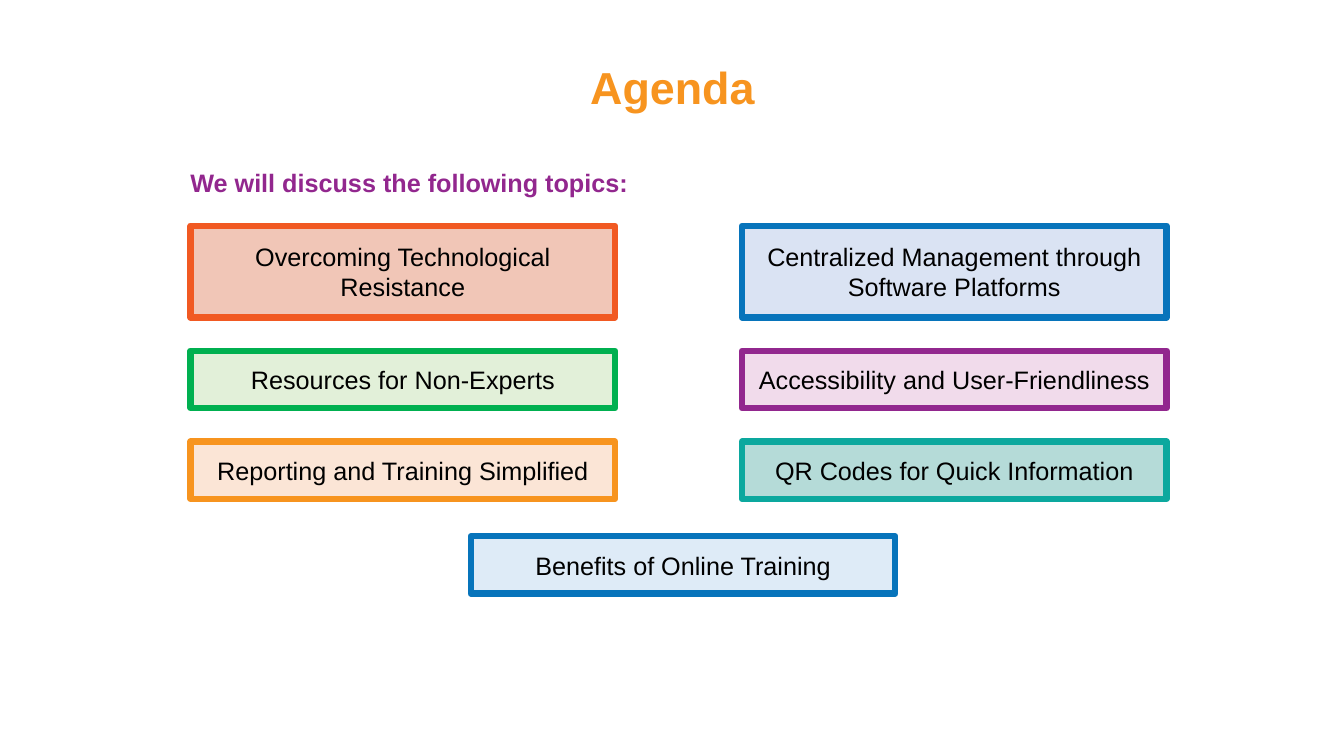
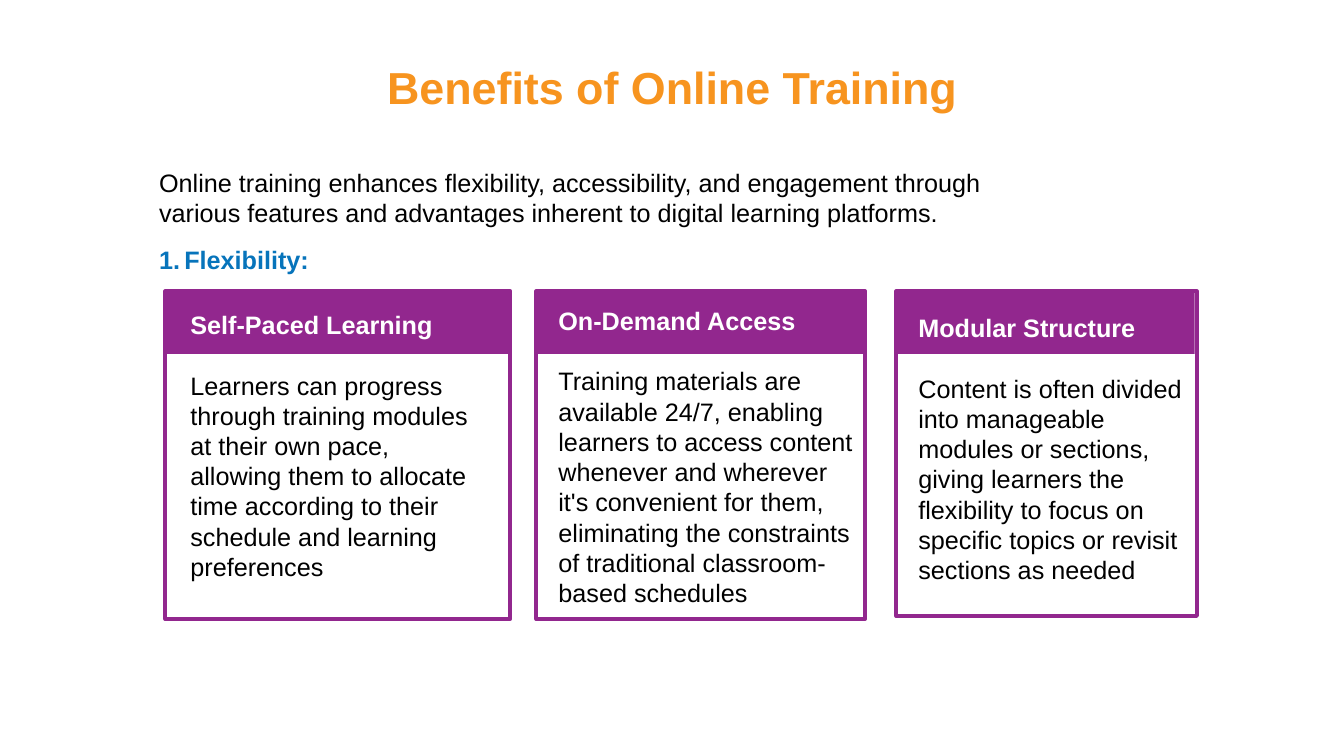
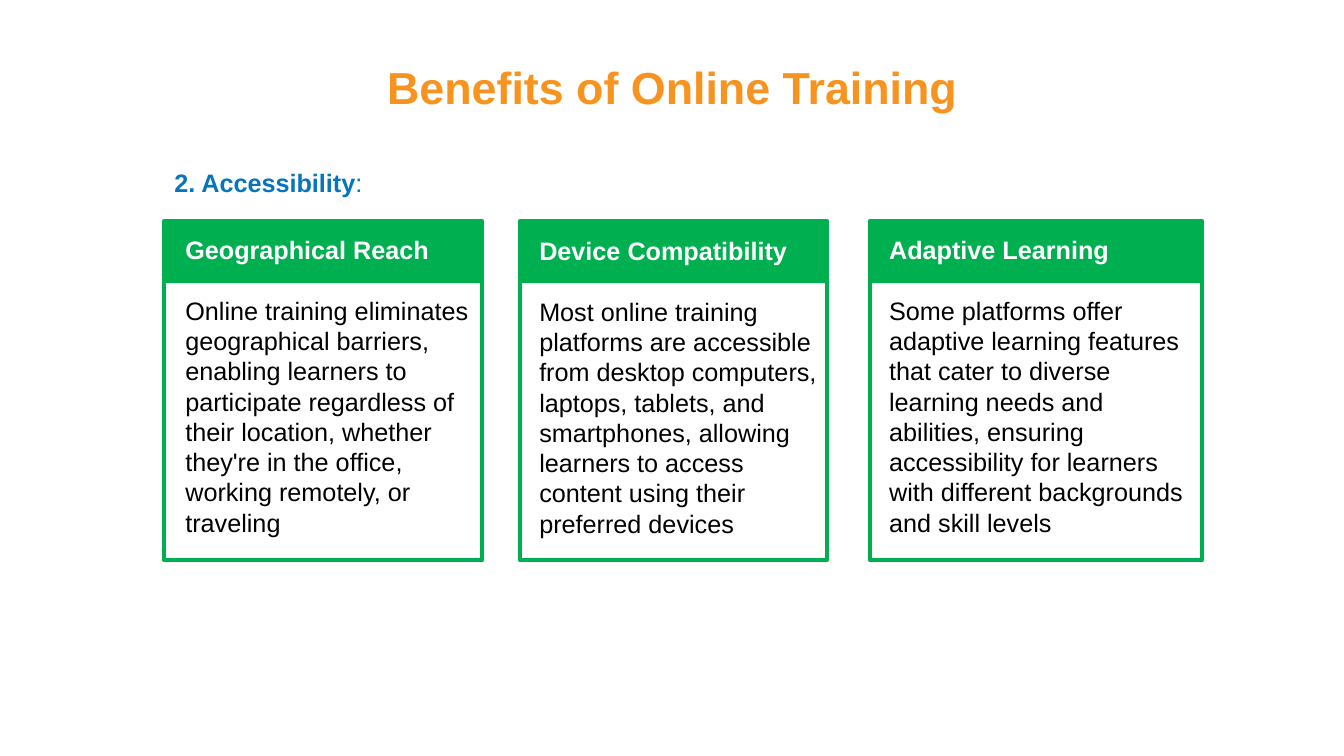
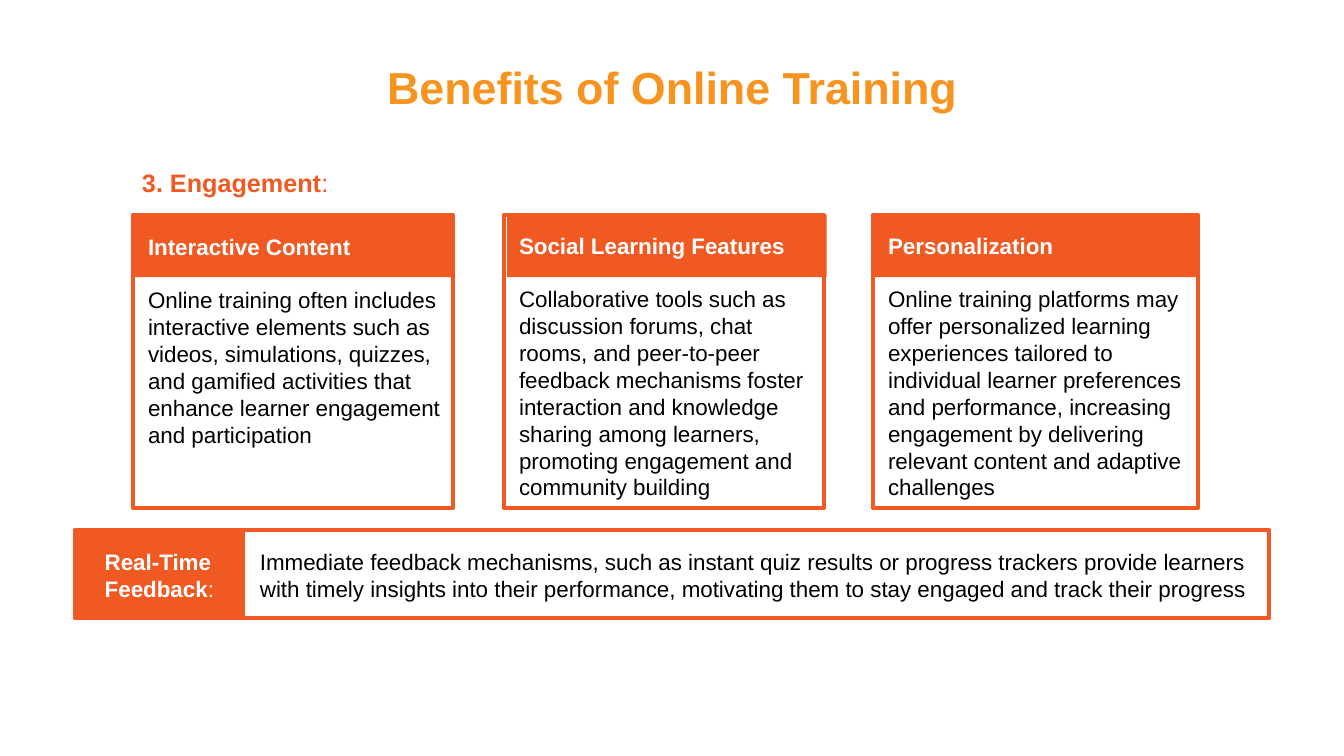
from dataclasses import dataclass

from lxml.etree import SubElement
from pptx import Presentation
from pptx.dml.color import RGBColor
from pptx.enum.shapes import MSO_SHAPE
from pptx.enum.text import MSO_ANCHOR, MSO_AUTO_SIZE, PP_ALIGN
from pptx.oxml.ns import qn
from pptx.util import Inches, Pt


@dataclass(frozen=True)
class Theme:
    """Colours, font and type sizes shared by all slides."""
    font: str = "Arial"
    head: int = 32
    body: int = 18
    small: int = 16
    black: str = "000000"
    white: str = "FFFFFF"
    amber: str = "F7941F"
    purple: str = "92278E"
    blue: str = "0774BB"
    green: str = "00B050"
    orange: str = "F15922"
    teal: str = "0CA89E"


@dataclass(frozen=True)
class Card:
    """A framed card: left and width, text box, and any band offset."""
    head: str
    body: str
    left: float
    width: float
    text: tuple
    shift: float = 0


THEME = Theme()


def paint(font, size, color, bold):
    """Set the face, size, colour and weight of a font."""
    font.name, font.size, font.bold = THEME.font, Pt(size), bold
    font.color.rgb = RGBColor.from_string(color)


def write(frame, text, *, size=THEME.body, color=THEME.black, bold=False,
          align=PP_ALIGN.LEFT, gap=0, lines=None, tail="", count=False):
    """Add one formatted paragraph to a text frame."""
    first = frame.paragraphs[0]
    para = frame.add_paragraph() if first.runs else first
    para.alignment = align
    if gap:
        para.space_before = Pt(gap)
    if lines:
        para.line_spacing = lines
    if count:
        props = para._p.get_or_add_pPr()
        props.set("marL", str(Inches(0.25)))
        props.set("indent", str(Inches(-0.25)))
        SubElement(props, qn("a:buAutoNum"), type="arabicPeriod")
    for part, heavy in ((text, bold), (tail, False)):
        if part:
            run = para.add_run()
            run.text = part
            paint(run.font, size, color, heavy)


def area(slide, at, grow=False, anchor=MSO_ANCHOR.TOP):
    """Add a wrapping text box and return its frame."""
    frame = slide.shapes.add_textbox(*map(Inches, at)).text_frame
    frame.word_wrap = True
    frame.vertical_anchor = anchor
    if grow:
        frame.auto_size = MSO_AUTO_SIZE.SHAPE_TO_FIT_TEXT
    return frame


def box(slide, at, fill=None, line=None, width=3):
    """Add a rectangle with an optional fill and outline."""
    shape = slide.shapes.add_shape(MSO_SHAPE.RECTANGLE, *map(Inches, at))
    shape.shadow.inherit = False
    if fill:
        shape.fill.solid()
        shape.fill.fore_color.rgb = RGBColor.from_string(fill)
    else:
        shape.fill.background()
    if line:
        shape.line.color.rgb = RGBColor.from_string(line)
        shape.line.width = Pt(width)
    else:
        shape.line.fill.background()
    return shape


def start(deck, title):
    """Add a blank slide with the shared title."""
    slide = deck.slides.add_slide(deck.slide_layouts[6])
    frame = area(slide, (0.92, 0.4, 11.5, 0.99), anchor=MSO_ANCHOR.MIDDLE)
    write(frame, title, size=THEME.head, color=THEME.amber, bold=True,
          align=PP_ALIGN.CENTER, lines=0.9)
    return slide


def topic(slide, text, at, fill, line):
    """Add an agenda box with centred text."""
    frame = box(slide, at, fill, line, 4.5).text_frame
    frame.word_wrap = True
    frame.vertical_anchor = MSO_ANCHOR.MIDDLE
    write(frame, text, align=PP_ALIGN.CENTER)


def cards(slide, items, top, height, color, size=THEME.body):
    """Add a row of cards, each with a coloured band and a frame."""
    for item in items:
        box(slide, (item.left + item.shift, top, item.width, 0.62), color)
        box(slide, (item.left, top, item.width, height), line=color)
    for item in items:
        frame = area(slide, item.text, grow=True)
        write(frame, item.head, size=size, color=THEME.white, bold=True)
        write(frame, item.body, size=size, gap=size * 1.2)


def agenda(deck):
    """Build the agenda slide."""
    slide = start(deck, "Agenda")
    write(area(slide, (1.79, 1.61, 5, 4.68)),
          "We will discuss the following topics:",
          color=THEME.purple, bold=True)
    rows = (
        (0.91, ("Overcoming Technological Resistance", "F1C6B7", THEME.orange),
         ("Centralized Management through Software Platforms", "DAE3F3",
          THEME.blue)),
        (0.57, ("Resources for Non-Experts", "E2F0D9", THEME.green),
         ("Accessibility and User-Friendliness", "F1DBEB", THEME.purple)),
        (0.57, ("Reporting and Training Simplified", "FBE5D6", THEME.amber),
         ("QR Codes for Quick Information", "B5DBD8", THEME.teal)),
    )
    top, wide = 2.24, 4.21
    for high, *pair in rows:
        for left, (text, fill, line) in zip((1.89, 7.36), pair):
            topic(slide, text, (left, top, wide, high), fill, line)
        top += high + 0.33
    topic(slide, "Benefits of Online Training", (4.67, 5.32, wide, 0.57),
          "DEEBF7", THEME.blue)


def benefit(deck):
    """Add a slide under the benefits title."""
    return start(deck, "Benefits of Online Training")


def flexible(deck):
    """Build the flexibility slide."""
    slide = benefit(deck)
    frame = area(slide, (1.48, 1.61, 8.62, 1.44))
    write(frame, "Online training enhances flexibility, accessibility, and "
          "engagement through various features and advantages inherent to "
          "digital learning platforms.")
    write(frame, "Flexibility:", color=THEME.blue, bold=True, gap=12,
          count=True)
    cards(slide, (
        Card("Self-Paced Learning",
             "Learners can progress through training modules at their own "
             "pace, allowing them to allocate time according to their "
             "schedule and learning preferences",
             1.64, 3.42, (1.79, 3.02, 3.14, 2.83)),
        Card("On-Demand Access",
             "Training materials are available 24/7, enabling learners to "
             "access content whenever and wherever it's convenient for them, "
             "eliminating the constraints of traditional classroom-based "
             "schedules",
             5.32, 3.26, (5.44, 2.98, 3.14, 3.13)),
    ), 2.89, 3.25, THEME.purple)
    cards(slide, (
        Card("Modular Structure",
             "Content is often divided into manageable modules or sections, "
             "giving learners the flexibility to focus on specific topics or "
             "revisit sections as needed",
             8.89, 2.98, (9.01, 3.05, 2.85, 2.83), -0.02),
    ), 2.89, 3.22, THEME.purple)


def access(deck):
    """Build the accessibility slide."""
    slide = benefit(deck)
    write(area(slide, (1.63, 1.61, 8.62, 0.58)), "2. Accessibility",
          color=THEME.blue, bold=True, tail=":")
    cards(slide, (
        Card("Geographical Reach",
             "Online training eliminates geographical barriers, enabling "
             "learners to participate regardless of their location, whether "
             "they're in the office, working remotely, or traveling",
             1.63, 3.15, (1.74, 2.28, 3.04, 3.13)),
        Card("Device Compatibility",
             "Most online training platforms are accessible from desktop "
             "computers, laptops, tablets, and smartphones, allowing "
             "learners to access content using their preferred devices",
             5.16, 3.04, (5.25, 2.29, 2.95, 3.13)),
        Card("Adaptive Learning",
             "Some platforms offer adaptive learning features that cater to "
             "diverse learning needs and abilities, ensuring accessibility "
             "for learners with different backgrounds and skill levels",
             8.63, 3.29, (8.72, 2.28, 3.21, 3.13)),
    ), 2.19, 3.37, THEME.green)


def engage(deck):
    """Build the engagement slide."""
    slide = benefit(deck)
    write(area(slide, (1.31, 1.61, 11.15, 4.68)), "3. Engagement",
          color=THEME.orange, bold=True, tail=":")
    cards(slide, (
        Card("Interactive Content",
             "Online training often includes interactive elements such as "
             "videos, simulations, quizzes, and gamified activities that "
             "enhance learner engagement and participation",
             1.32, 3.17, (1.37, 2.26, 3.13, 2.26), -0.01),
        Card("Social Learning Features",
             "Collaborative tools such as discussion forums, chat rooms, and "
             "peer-to-peer feedback mechanisms foster interaction and "
             "knowledge sharing among learners, promoting engagement and "
             "community building",
             5, 3.17, (5.05, 2.25, 3.17, 2.79), 0.03),
        Card("Personalization",
             "Online training platforms may offer personalized learning "
             "experiences tailored to individual learner preferences and "
             "performance, increasing engagement by delivering relevant "
             "content and adaptive challenges",
             8.66, 3.22, (8.71, 2.25, 3.17, 2.79)),
    ), 2.13, 2.91, THEME.orange, THEME.small)
    box(slide, (0.76, 5.26, 1.67, 0.88), THEME.orange)
    box(slide, (0.74, 5.26, 11.85, 0.87), line=THEME.orange)
    write(area(slide, (0.94, 5.39, 1.31, 0.64), grow=True),
          "Real-Time Feedback", size=THEME.small, color=THEME.white,
          bold=True, tail=":")
    write(area(slide, (2.48, 5.39, 10.23, 0.64), grow=True),
          "Immediate feedback mechanisms, such as instant quiz results or "
          "progress trackers provide learners with timely insights into "
          "their performance, motivating them to stay engaged and track "
          "their progress", size=THEME.small)


def main():
    """Build and save the deck."""
    deck = Presentation()
    deck.slide_width, deck.slide_height = Inches(13.33), Inches(7.5)
    for build in (agenda, flexible, access, engage):
        build(deck)
    deck.save("out.pptx")


if __name__ == "__main__":
    main()
